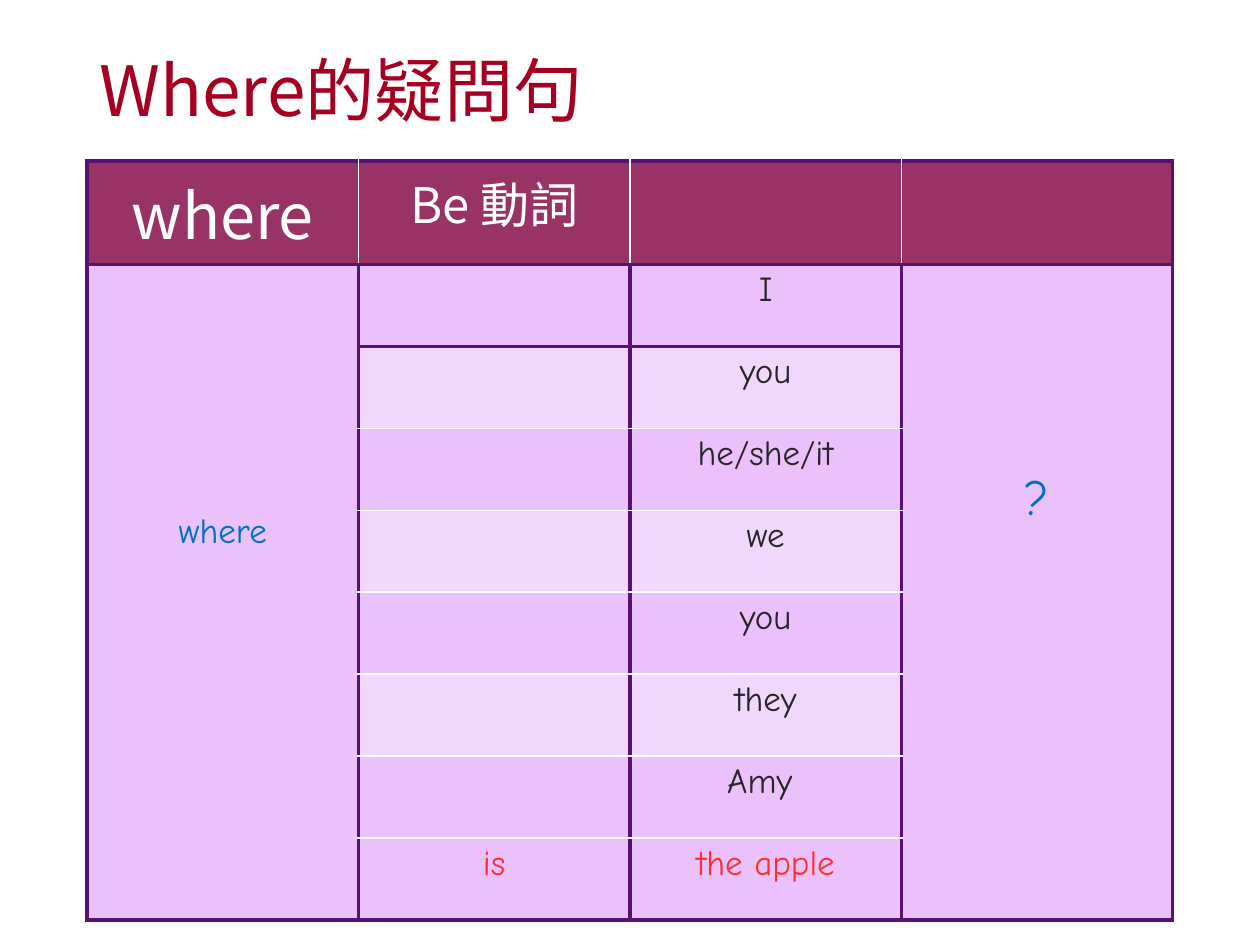
"""Build a slide with a table of questions that begin with "where"."""
import pptx
import pptx.dml.color
import pptx.enum.text
import pptx.oxml
import pptx.oxml.ns
import pptx.util

PX = 914400 // 126
HEAD_FONT, BODY_FONT = "Noto Sans CJK JP", "Comic Neue"
WHITE, PURPLE, PLUM = "FFFFFF", "561171", "993366"
LILAC, PALE = "EAC1FB", "F2D7FD"
INK, BLUE, RED, CRIMSON = "262626", "0070C0", "FF2F2F", "A50021"
HEADINGS = [("where", 36), ("Be 動詞", 28)]
SUBJECTS = ["I", "you", "he/she/it", "we", "you", "they", "Amy ", "the apple"]
COLS, ROWS = 4, len(SUBJECTS) + 1


def px(n):
    """Turn pixels into EMU."""
    return pptx.util.Emu(n * PX)


def rgb(value):
    """Turn a hex string into a colour."""
    return pptx.dml.color.RGBColor.from_string(value)


def set_text(tf, text, size, font, color, align):
    """Write one formatted paragraph."""
    tf.text = text
    p = tf.paragraphs[0]
    p.alignment = align
    for r in p.runs:
        r.font.size = pptx.util.Pt(size)
        r.font.name = font
        r.font.bold = False
        r.font.color.rgb = rgb(color)
        ea = pptx.oxml.parse_xml(f'<a:ea {pptx.oxml.ns.nsdecls("a")} typeface="{font}"/>')
        r.font._element.find(pptx.oxml.ns.qn("a:latin")).addnext(ea)


def set_cell_text(cell, text, size, font, color, top=6):
    """Write centred text a given distance below the top of a cell."""
    cell.margin_top = px(top)
    set_text(cell.text_frame, text, size, font, color, pptx.enum.text.PP_ALIGN.CENTER)


def set_borders(cell, strong):
    """Draw each side of a cell as a thick purple or a thin white line."""
    tc_pr = cell._tc.get_or_add_tcPr()
    for side in "LRTB":
        color, width = (PURPLE, 2.25) if strong[side] else (WHITE, 1)
        tc_pr.append(pptx.oxml.parse_xml(
            f'<a:ln{side} {pptx.oxml.ns.nsdecls("a")} w="{pptx.util.Pt(width)}">'
            f'<a:solidFill><a:srgbClr val="{color}"/></a:solidFill></a:ln{side}>'))


def strong_across(row, col):
    """Tell whether the line above a row is thick in a column."""
    return col in (0, COLS - 1) or row in (0, 1, 2, ROWS)


def strong_down(row, col):
    """Tell whether the line left of a column is thick in a row."""
    return row > 0 or col in (0, COLS)


def fill_color(row, col):
    """Choose the fill of a cell."""
    if row == 0:
        return PLUM
    banded = col in (1, 2) and row % 2 == 0 and row < ROWS - 1
    return PALE if banded else LILAC


def add_title(s):
    """Place and format the title."""
    sp = s.shapes.title
    sp.left, sp.top, sp.width, sp.height = px(87), px(50), px(1086), px(88)
    tf = sp.text_frame
    tf.vertical_anchor = pptx.enum.text.MSO_ANCHOR.MIDDLE
    set_text(tf, "Where的疑問句", 39.6, HEAD_FONT, CRIMSON, pptx.enum.text.PP_ALIGN.LEFT)
    tf.paragraphs[0].line_spacing = 0.9


def add_question_table(s):
    """Add the table of question parts."""
    table = s.shapes.add_table(ROWS, COLS, px(87), px(161), px(1086), px(759)).table
    table.first_row = table.horz_banding = False
    for row in range(ROWS):
        table.rows[row].height = px(82 if row else 103)
        for col in range(COLS):
            cell = table.cell(row, col)
            set_borders(cell, {"L": strong_down(row, col), "R": strong_down(row, col + 1),
                               "T": strong_across(row, col), "B": strong_across(row + 1, col)})
            cell.fill.solid()
            cell.fill.fore_color.rgb = rgb(fill_color(row, col))
    for col, (text, size) in enumerate(HEADINGS):
        set_cell_text(table.cell(0, col), text, size, HEAD_FONT, WHITE)
    for row, subject in enumerate(SUBJECTS, 1):
        color = RED if row == ROWS - 1 else INK
        set_cell_text(table.cell(row, 2), subject, 20, BODY_FONT, color)
    set_cell_text(table.cell(ROWS - 1, 1), "is", 20, BODY_FONT, RED)
    for col, text, size, top in [(0, "where", 20, 248), (COLS - 1, "?", 28, 207)]:
        table.cell(1, col).merge(table.cell(ROWS - 1, col))
        set_cell_text(table.cell(1, col), text, size, BODY_FONT, BLUE, top)


def main():
    """Build and save the slide."""
    prs = pptx.Presentation()
    prs.slide_width, prs.slide_height = px(1260), px(945)
    s = prs.slides.add_slide(prs.slide_layouts[5])
    add_title(s)
    add_question_table(s)
    prs.save("out.pptx")


if __name__ == "__main__":
    main()
